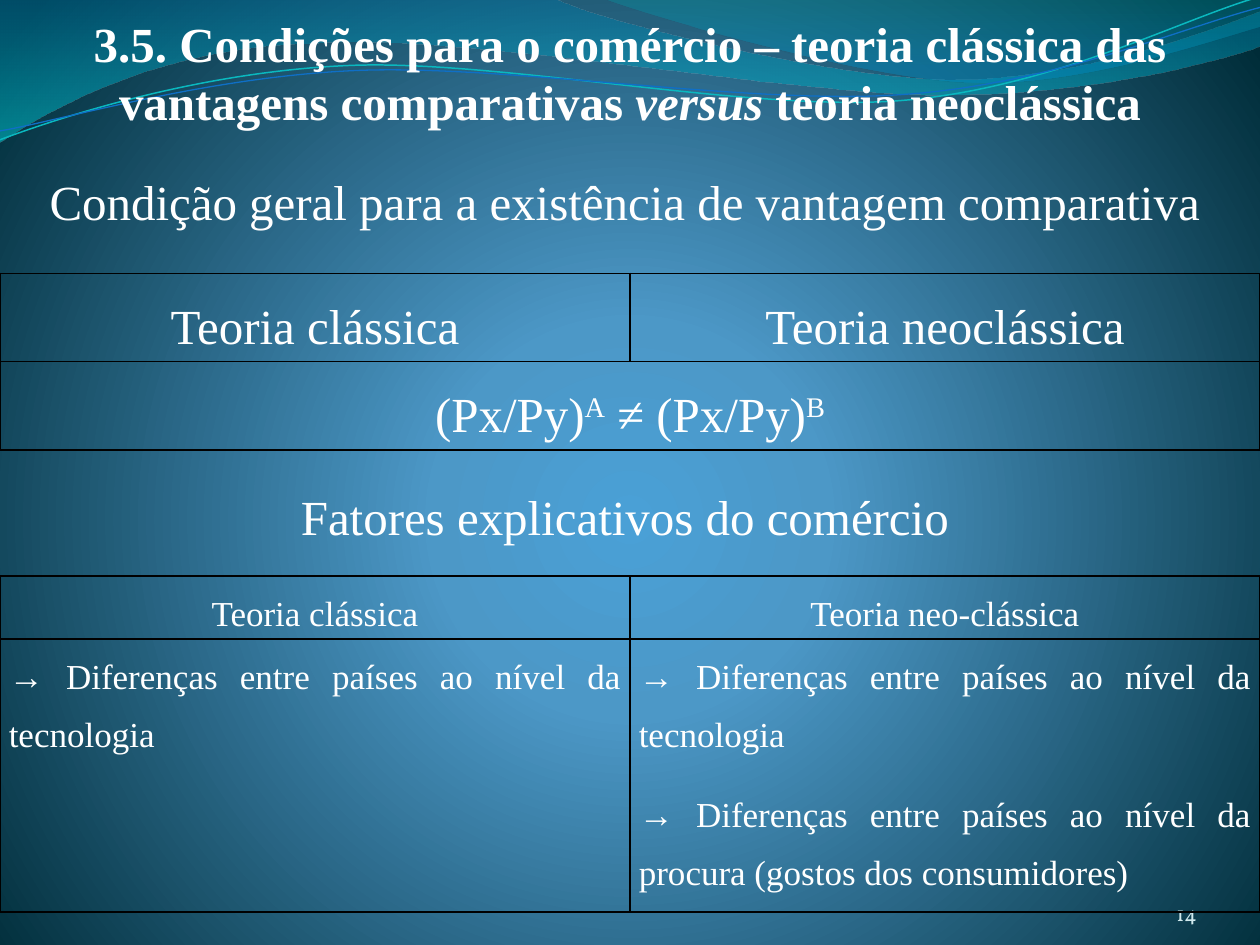
"""Build the slide comparing classical and neoclassical conditions for trade."""
import math
from lxml import etree
from pptx import Presentation, util as u
from pptx.dml.color import RGBColor
from pptx.enum import text
from pptx.oxml import parse_xml
from pptx.oxml.ns import nsdecls, qn

WHITE = RGBColor(0xFF, 0xFF, 0xFF)
PALE = RGBColor(0xD1, 0xEA, 0xEE)
BLACK = RGBColor(0, 0, 0)
SKY = RGBColor(0x4A, 0xA0, 0xD6)
STEEL = RGBColor(0x4C, 0x98, 0xC7)
NIGHT = RGBColor(0, 0x2C, 0x38)
BLUE = RGBColor(0, 0x74, 0xA1)
AQUA = RGBColor(0, 0xC6, 0xCF)
TEAL = RGBColor(0, 0xA1, 0xA9)
AZURE = RGBColor(0, 0x8B, 0xBF)
TURQUOISE = RGBColor(0x0A, 0xB8, 0xBF)
COBALT = RGBColor(0x0F, 0x6F, 0xC6)
CENTER, JUSTIFY = text.PP_ALIGN.CENTER, text.PP_ALIGN.JUSTIFY


def add_run(p, words, size=28, color=WHITE, font="Times New Roman",
            align=CENTER, bold=False, italic=False, raised=False):
    p.alignment = align
    r = p.add_run()
    r.text = words
    r.font.size, r.font.name = u.Pt(size), font
    r.font.bold, r.font.italic = bold, italic
    r.font.color.rgb = color
    if raised:
        r.font._element.set("baseline", "30000")


def gradient(stops, direction):
    gs = "".join(
        f'<a:gs pos="{pos * 1000}"><a:srgbClr val="{color}">'
        f'<a:alpha val="{alpha * 1000}"/></a:srgbClr></a:gs>'
        for pos, color, alpha in stops)
    return parse_xml(f'<a:gradFill {nsdecls("a")} rotWithShape="1">'
                     f'<a:gsLst>{gs}</a:gsLst>{direction}</a:gradFill>')


prs = Presentation()
prs.slide_width, prs.slide_height = u.Inches(10), u.Inches(7.5)
s = prs.slides.add_slide(prs.slide_layouts[5])

s.background.fill.solid()
bg = s.element.find(".//" + qn("p:bgPr"))
bg.replace(bg[0], gradient(
    [(0, SKY, 100), (25, STEEL, 100), (100, NIGHT, 100)],
    '<a:path path="circle"><a:fillToRect l="10000" t="110000" r="10000" b="100000"/></a:path>'))

waves = [
    ((0, 0), [(4.4, -0.01), (4.76, 0.17, 6.64, 0.63, 7.58, 0.63),
              (8.53, 0.63, 9.58, 0.26, 10, 0.09), (10.01, 0.36),
              (9.83, 0.44, 8.7, 0.76, 7.46, 0.75),
              (6.22, 0.75, 3.82, 0.28, 2.57, 0.34),
              (1.29, 0.36, 0.46, 0.83, -0.01, 1.13), (0, 0)],
     [(0, BLUE, 45), (100, AQUA, 55)], None),
    ((4.79, -0.01), [(5.09, 0.11, 6.82, 0.62, 7.69, 0.65),
                     (8.56, 0.69, 9.61, 0.32, 10, 0.21), (10, 0), (4.79, -0.01)],
     [(0, TEAL, 30), (80, AZURE, 45)], None),
    ((0, 1.11), [(0.48, 0.93, 1.58, 0.57, 2.77, 0.52),
                 (3.95, 0.47, 5.93, 0.89, 7.13, 0.8),
                 (8.33, 0.71, 9.38, 0.15, 9.98, -0.02)],
     None, (TURQUOISE, 0.85)),
    ((0, 1.04), [(0.47, 0.96, 1.64, 0.61, 2.83, 0.56),
                 (4.03, 0.51, 5.97, 0.84, 7.17, 0.75),
                 (8.36, 0.67, 9.41, 0.21, 10, 0.06)],
     None, (COBALT, 0.75)),
]
TILT = 2.7
for start, segments, stops, line in waves:
    angle = math.radians(TILT if line else 0)
    mid_x, mid_y = (start[0] + segments[-1][-2]) / 2, (start[1] + segments[-1][-1]) / 2
    curves = []
    for seg in [start] + segments:
        offsets = [(x - mid_x, y - mid_y) for x, y in zip(seg[::2], seg[1::2])]
        curves.append([(u.Inches(mid_x + x * math.cos(angle) - y * math.sin(angle)),
                        u.Inches(mid_y + x * math.sin(angle) + y * math.cos(angle)))
                       for x, y in offsets])
    fb = s.shapes.build_freeform(*curves[0][0])
    fb.add_line_segments([curve[-1] for curve in curves[1:]], close=stops is not None)
    sp = fb.convert_to_shape()
    for ln, curve in zip(sp.element.findall(".//" + qn("a:lnTo")), curves[1:]):
        if len(curve) == 3:
            bezier = etree.Element(qn("a:cubicBezTo"))
            for x, y in curve:
                etree.SubElement(bezier, qn("a:pt"), x=str(x - sp.left), y=str(y - sp.top))
            ln.getparent().replace(ln, bezier)
    sp.shadow.inherit = False
    sp.fill.background()
    if stops:
        sp.line.fill.background()
        no_fill = sp.element.spPr.find(qn("a:noFill"))
        sp.element.spPr.replace(no_fill, gradient(stops, '<a:lin ang="5400000" scaled="0"/>'))
    else:
        sp.rotation = 360 - TILT
        sp.line.color.rgb, sp.line.width = line[0], u.Pt(line[1])

title = s.shapes.title
s.shapes.element.append(title.element)
title.left, title.top = u.Inches(0), u.Inches(0.05)
title.width, title.height = u.Inches(10), u.Inches(1.04)
title.text_frame.auto_size = text.MSO_AUTO_SIZE.NONE
p = title.text_frame.paragraphs[0]
add_run(p, "3.5. Condições para o comércio – teoria clássica das vantagens comparativas ", bold=True)
add_run(p, "versus ", bold=True, italic=True)
add_run(p, "teoria neoclássica", bold=True)

sp = s.shapes.add_textbox(u.Inches(8.67), u.Inches(6.95), u.Inches(0.83), u.Inches(0.4))
tf = sp.text_frame
tf.word_wrap, tf.vertical_anchor = True, text.MSO_ANCHOR.BOTTOM
tf.margin_left = tf.margin_right = tf.margin_top = tf.margin_bottom = 0
add_run(tf.paragraphs[0], "14", size=12, color=PALE, font="Vollkorn", align=text.PP_ALIGN.RIGHT)

for top, heading in ((1.31, "Condição geral para a existência de vantagem comparativa"),
                     (3.81, "Fatores explicativos do comércio")):
    sp = s.shapes.add_textbox(u.Inches(-0.04), u.Inches(top), u.Inches(10), u.Inches(0.57))
    tf = sp.text_frame
    tf.word_wrap, tf.vertical_anchor = True, text.MSO_ANCHOR.MIDDLE
    add_run(tf.paragraphs[0], heading)

technology = "→ Diferenças entre países ao nível da tecnologia"
demand = "→ Diferenças entre países ao nível da procura (gostos dos consumidores)"
formula = [("(Px/Py)", False), ("A", True), (" ≠ (Px/Py)", False), ("B", True)]
tables = [
    (2.17, (0.61, 0.62), 28, CENTER,
     [[["Teoria clássica"], ["Teoria neoclássica"]], [[formula], []]]),
    (4.57, (0.5, 2.05), 20, JUSTIFY,
     [[["Teoria clássica"], ["Teoria neo-clássica"]],
      [[technology], [technology, demand]]]),
]
for top, heights, size, body_align, rows in tables:
    tbl = s.shapes.add_table(2, 2, u.Inches(0), u.Inches(top), u.Inches(10),
                             u.Inches(sum(heights))).table
    tbl.first_row = tbl.horz_banding = False
    for i, row in enumerate(rows):
        tbl.rows[i].height = u.Inches(heights[i])
        for j, paragraphs in enumerate(row):
            cell = tbl.cell(i, j)
            cell.margin_left = cell.margin_right = u.Inches(0.07)
            cell.margin_top = cell.margin_bottom = 0
            for k, content in enumerate(paragraphs):
                tf = cell.text_frame
                p = tf.add_paragraph() if k else tf.paragraphs[0]
                p.line_spacing = 1.5
                p.space_before = p.space_after = u.Pt(6)
                runs = [(content, False)] if isinstance(content, str) else content
                for words, raised in runs:
                    add_run(p, words, size=size, align=body_align if i else CENTER, raised=raised)
            tcPr = cell._tc.get_or_add_tcPr()
            for side in ("lnL", "lnR", "lnT", "lnB"):
                ln = etree.SubElement(tcPr, qn("a:" + side), w=str(u.Pt(1)))
                fill = etree.SubElement(ln, qn("a:solidFill"))
                etree.SubElement(fill, qn("a:srgbClr"), val=str(BLACK))
            cell.fill.background()
    if not rows[1][1]:
        tbl.cell(1, 0).merge(tbl.cell(1, 1))

prs.save("out.pptx")
